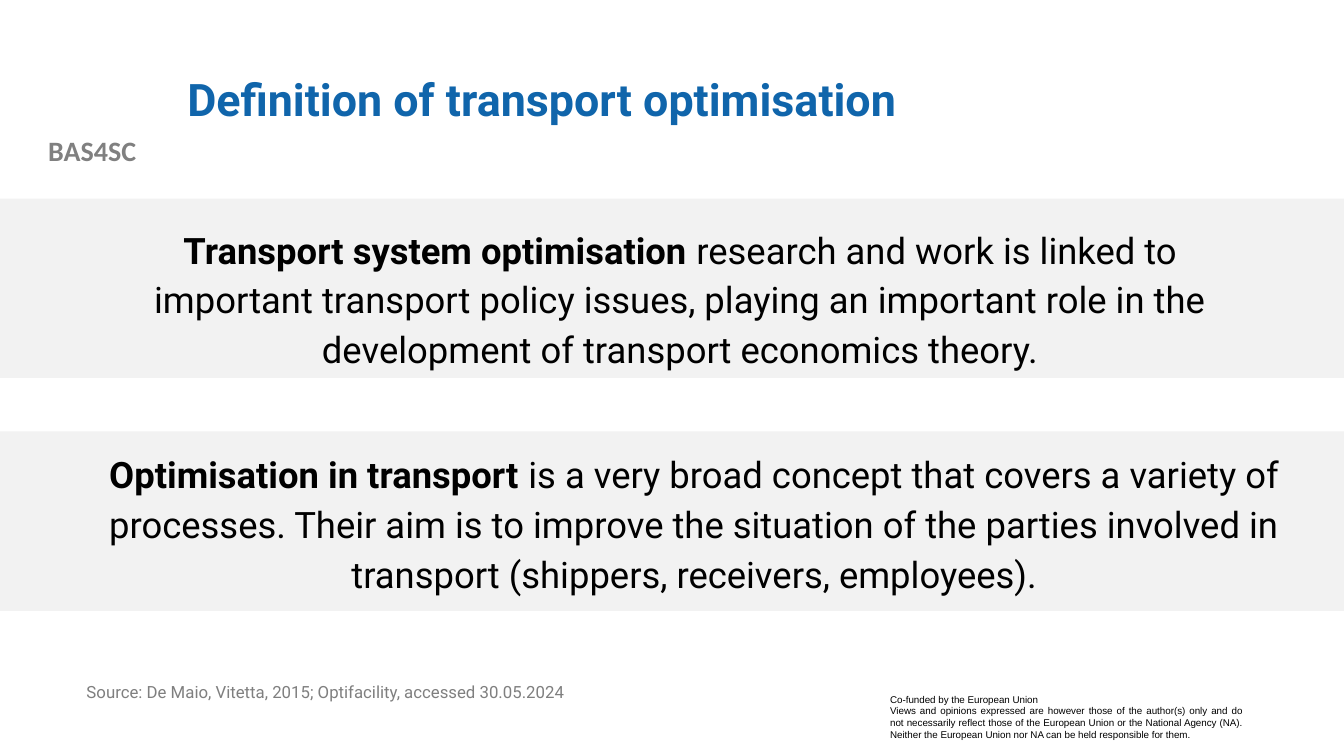
from dataclasses import dataclass

from pptx import Presentation
from pptx.dml.color import RGBColor
from pptx.enum.shapes import MSO_SHAPE
from pptx.enum.text import MSO_ANCHOR, PP_ALIGN
from pptx.util import Inches, Pt


@dataclass(frozen=True)
class TextStyle:
    font: str
    size: float
    color: str
    bold: bool = False
    align: PP_ALIGN = PP_ALIGN.LEFT
    line_spacing: float = 1.0


@dataclass(frozen=True)
class Theme:
    band: str = "F2F2F2"
    title: TextStyle = TextStyle("Roboto", 32, "1065AB", True, line_spacing=0.9)
    label: TextStyle = TextStyle("Calibri", 20, "808080", True, PP_ALIGN.CENTER)
    body: TextStyle = TextStyle("Roboto", 26, "000000", False, PP_ALIGN.CENTER, 1.14)
    source: TextStyle = TextStyle("Roboto", 12, "7F7F7F", line_spacing=0.9)
    funding: TextStyle = TextStyle("Arial", 7, "000000", align=PP_ALIGN.JUSTIFY)


class SlideBuilder:
    def __init__(self, slide, theme):
        self.slide = slide
        self.theme = theme

    def band(self, top):
        shape = self.slide.shapes.add_shape(
            MSO_SHAPE.RECTANGLE, Inches(0), Inches(top), Inches(13.33), Inches(1.78)
        )
        shape.shadow.inherit = False
        shape.fill.solid()
        shape.fill.fore_color.rgb = RGBColor.from_string(self.theme.band)
        shape.line.fill.background()

    def text(self, box, style, paragraphs, anchor=MSO_ANCHOR.TOP):
        shape = self.slide.shapes.add_textbox(*map(Inches, box))
        frame = shape.text_frame
        frame.word_wrap = True
        frame.vertical_anchor = anchor
        for index, content in enumerate(paragraphs):
            paragraph = frame.add_paragraph() if index else frame.paragraphs[0]
            paragraph.alignment = style.align
            paragraph.line_spacing = style.line_spacing
            paragraph.font.name = style.font
            paragraph.font.size = Pt(style.size)
            paragraph.font.bold = style.bold
            paragraph.font.color.rgb = RGBColor.from_string(style.color)
            paragraph.add_run().text = content
        return shape

    def definition(self, box, term, explanation):
        shape = self.text(box, self.theme.body, [term])
        paragraph = shape.text_frame.paragraphs[0]
        paragraph.runs[0].font.bold = True
        paragraph.add_run().text = explanation


def main():
    presentation = Presentation()
    presentation.slide_width = Inches(13.33)
    presentation.slide_height = Inches(7.5)
    theme = Theme()
    builder = SlideBuilder(
        presentation.slides.add_slide(presentation.slide_layouts[6]), theme
    )

    builder.text((0, 1.28, 1.83, 0.44), theme.label, ["BAS4SC"])
    builder.text(
        (8.73, 6.83, 3.69, 0.57),
        theme.funding,
        [
            "Co-funded by the European Union",
            "Views and opinions expressed are however those of the author(s) only "
            "and do not necessarily reflect those of the European Union or the "
            "National Agency (NA). Neither the European Union nor NA can be held "
            "responsible for them.",
        ],
    )
    for top in (1.97, 4.28):
        builder.band(top)
    builder.text(
        (1.76, 0.4, 10.66, 1.22),
        theme.title,
        ["Definition of transport optimisation"],
        MSO_ANCHOR.MIDDLE,
    )
    builder.definition(
        (1, 2.15, 11.5, 1.69),
        "Transport system optimisation ",
        "research and work is linked to important transport policy issues, "
        "playing an important role in the development of transport economics theory.",
    )
    builder.definition(
        (0.93, 4.38, 11.92, 1.69),
        "Optimisation in transport ",
        "is a very broad concept that covers a variety of processes. Their aim is "
        "to improve the situation of the parties involved in transport "
        "(shippers, receivers, employees).",
    )
    builder.text(
        (0.76, 6.74, 5.6, 0.52),
        theme.source,
        ["Source: De Maio, Vitetta, 2015; Optifacility, accessed 30.05.2024"],
    )
    presentation.save("out.pptx")


if __name__ == "__main__":
    main()
